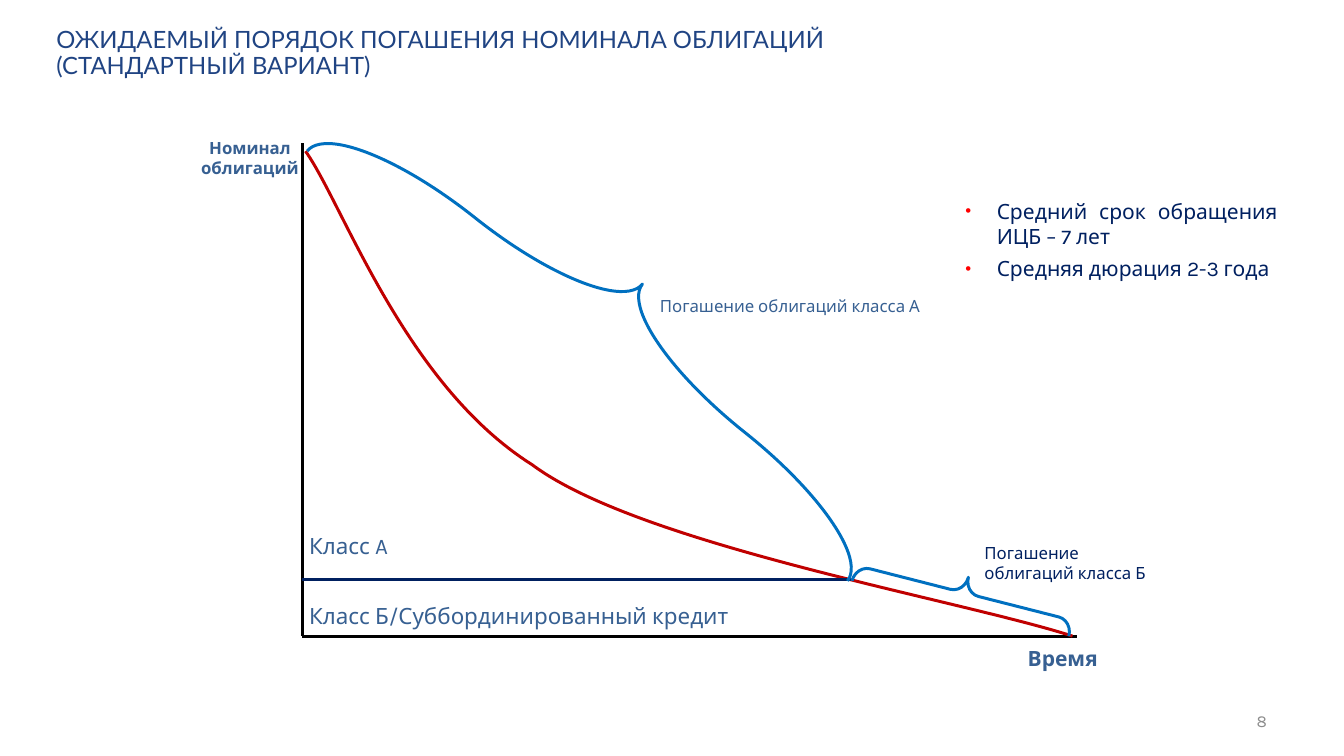
from dataclasses import dataclass

from lxml import etree
from pptx import Presentation
from pptx import util as u
from pptx.dml.color import RGBColor
from pptx.enum import shapes, text
from pptx.oxml.ns import qn


@dataclass(frozen=True)
class Theme:
    heading_font: str = "Lato"
    body_font: str = "Karla"
    title_color: str = "204483"
    label_color: str = "376092"
    navy: str = "002060"
    axis_color: str = "000000"
    curve_color: str = "C00000"
    brace_color: str = "0070C0"
    bullet_color: str = "FF0000"
    number_color: str = "8C8C8C"
    title_size: float = 17
    class_size: float = 16
    body_size: float = 15
    small_size: float = 12
    line_width: float = 2.13


THEME = Theme()
AXIS_X, AXIS_TOP, AXIS_Y, AXIS_END = 7.62, 3.61, 16.03, 27.13
CLASS_B_LEVEL, CLASS_A_END = 14.6, 21.44
REPAYMENT_CURVE = [
    (7.7, 3.81),
    (8.64, 5.13), (10.19, 9.68), (13.41, 11.71),
    (16.13, 13.74), (24.18, 15.11), (27.03, AXIS_Y),
]


def format_paragraph(paragraph, size, color, font=THEME.body_font, bold=False,
                     align=text.PP_ALIGN.LEFT):
    paragraph.alignment = align
    for run in paragraph.runs:
        run.font.name = font
        run.font.size = u.Pt(size)
        run.font.bold = bold
        run.font.color.rgb = RGBColor.from_string(color)


def set_margins(frame, margin):
    frame.margin_left = frame.margin_right = margin
    frame.margin_top = frame.margin_bottom = margin


def add_title(slide, wording):
    title = slide.shapes.title
    title.left, title.top, title.width, title.height = map(u.Cm, (1.42, 0.56, 20.9, 1.6))
    frame = title.text_frame
    frame.text = wording
    frame.auto_size = text.MSO_AUTO_SIZE.NONE
    frame.vertical_anchor = text.MSO_ANCHOR.MIDDLE
    set_margins(frame, 0)
    paragraph = frame.paragraphs[0]
    paragraph.line_spacing = 0.9
    format_paragraph(paragraph, THEME.title_size, THEME.title_color, THEME.heading_font)


def add_label(slide, wording, box, size, color, **style):
    frame = slide.shapes.add_textbox(*map(u.Cm, box)).text_frame
    frame.word_wrap = True
    frame.text = wording
    format_paragraph(frame.paragraphs[0], size, color, **style)
    return frame


def add_bullet(paragraph):
    properties = paragraph._p.get_or_add_pPr()
    properties.set("marL", str(u.Cm(0.79)))
    properties.set("indent", str(-u.Cm(0.79)))
    color = etree.SubElement(properties, qn("a:buClr"))
    etree.SubElement(color, qn("a:srgbClr"), val=THEME.bullet_color)
    etree.SubElement(properties, qn("a:buSzPct"), val="80000")
    etree.SubElement(properties, qn("a:buFont"), typeface="Arial")
    etree.SubElement(properties, qn("a:buChar"), char="•")


def add_bullet_list(slide, items, box):
    frame = slide.shapes.add_textbox(*map(u.Cm, box)).text_frame
    frame.word_wrap = True
    set_margins(frame, 0)
    frame.text = "\n".join(items)
    for index, paragraph in enumerate(frame.paragraphs):
        add_bullet(paragraph)
        paragraph.space_before = u.Pt(5 if index else 0)
        format_paragraph(paragraph, THEME.body_size, THEME.navy,
                         align=text.PP_ALIGN.JUSTIFY)


def style_line(shape, color):
    shape.line.color.rgb = RGBColor.from_string(color)
    shape.line.width = u.Pt(THEME.line_width)


def add_line(slide, start, end, color):
    line = slide.shapes.add_connector(shapes.MSO_CONNECTOR.STRAIGHT,
                                      *map(u.Cm, start + end))
    style_line(line, color)
    etree.SubElement(line._element.spPr, qn("a:effectLst"))


def style_outline(shape, color):
    shape.fill.background()
    shape.shadow.inherit = False
    style_line(shape, color)


def add_curve(slide, points, color):
    """Draw a start point followed by Bezier triples as one smooth path."""
    start, *rest = [(u.Cm(x), u.Cm(y)) for x, y in points]
    builder = slide.shapes.build_freeform(*start)
    builder.add_line_segments(rest, close=False)
    curve = builder.convert_to_shape()
    path = curve._element.find(".//" + qn("a:path"))
    segments = path.findall(qn("a:lnTo"))
    for first in range(0, len(segments), 3):
        bezier = etree.SubElement(path, qn("a:cubicBezTo"))
        for segment in segments[first:first + 3]:
            bezier.append(segment[0])
            path.remove(segment)
    style_outline(curve, color)


def add_brace(slide, box, rotation, curl):
    brace = slide.shapes.add_shape(shapes.MSO_SHAPE.RIGHT_BRACE, *map(u.Cm, box))
    brace.rotation = rotation
    brace.adjustments[0] = curl
    brace.adjustments[1] = 0.5
    style_outline(brace, THEME.brace_color)


def main():
    presentation = Presentation()
    presentation.slide_width, presentation.slide_height = u.Cm(33.87), u.Cm(19.05)
    slide = presentation.slides.add_slide(presentation.slide_layouts[5])

    add_title(slide, "ОЖИДАЕМЫЙ ПОРЯДОК ПОГАШЕНИЯ НОМИНАЛА ОБЛИГАЦИЙ \v(СТАНДАРТНЫЙ ВАРИАНТ)")
    number = add_label(slide, "8", (24.28, 17.65, 7.9, 1.02), THEME.small_size,
                       THEME.number_color, align=text.PP_ALIGN.RIGHT)
    number.vertical_anchor = text.MSO_ANCHOR.MIDDLE

    origin = (AXIS_X, AXIS_Y)
    add_line(slide, (AXIS_X, AXIS_TOP), origin, THEME.axis_color)
    add_line(slide, origin, (AXIS_END, AXIS_Y), THEME.axis_color)
    add_curve(slide, REPAYMENT_CURVE, THEME.curve_color)
    add_line(slide, (AXIS_X, CLASS_B_LEVEL), (CLASS_A_END, CLASS_B_LEVEL), THEME.navy)
    add_brace(slide, (14.05, -0.51, 2.64, 17.4), 308.5, 2.05)
    add_brace(slide, (23.9, 12.12, 0.81, 5.64), 284.3, 0.45)

    add_label(slide, "Номинал облигаций", (4.8, 3.35, 3, 1.27), THEME.small_size,
              THEME.label_color, bold=True, align=text.PP_ALIGN.CENTER)
    add_label(slide, "Время", (25.65, 16.13, 2.9, 0.89), THEME.body_size,
              THEME.label_color, bold=True)
    add_label(slide, "Класс A", (7.54, 13.28, 3, 0.94), THEME.class_size, THEME.label_color)
    add_label(slide, "Класс Б/Суббординированный кредит", (7.54, 15.04, 11.18, 0.94),
              THEME.class_size, THEME.label_color)
    add_label(slide, "Погашение облигаций класса А", (16.38, 7.32, 7.42, 0.76),
              THEME.small_size, THEME.label_color)
    add_label(slide, "Погашение облигаций класса Б", (24.56, 13.56, 4.75, 1.27),
              THEME.small_size, THEME.navy)
    add_bullet_list(slide, ["Средний срок обращения ИЦБ – 7 лет", "Средняя дюрация 2-3 года"],
                    (24.33, 5, 7.87, 2.69))

    presentation.save("out.pptx")


if __name__ == "__main__":
    main()
